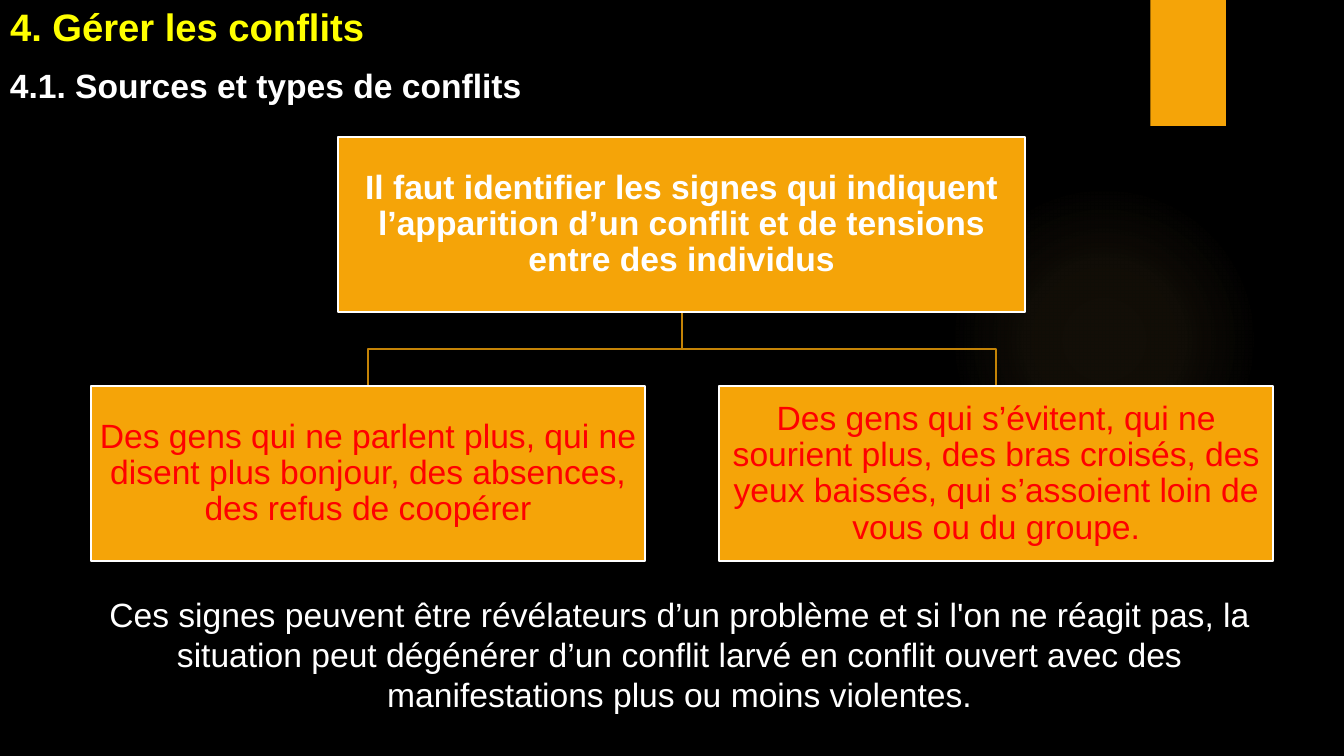
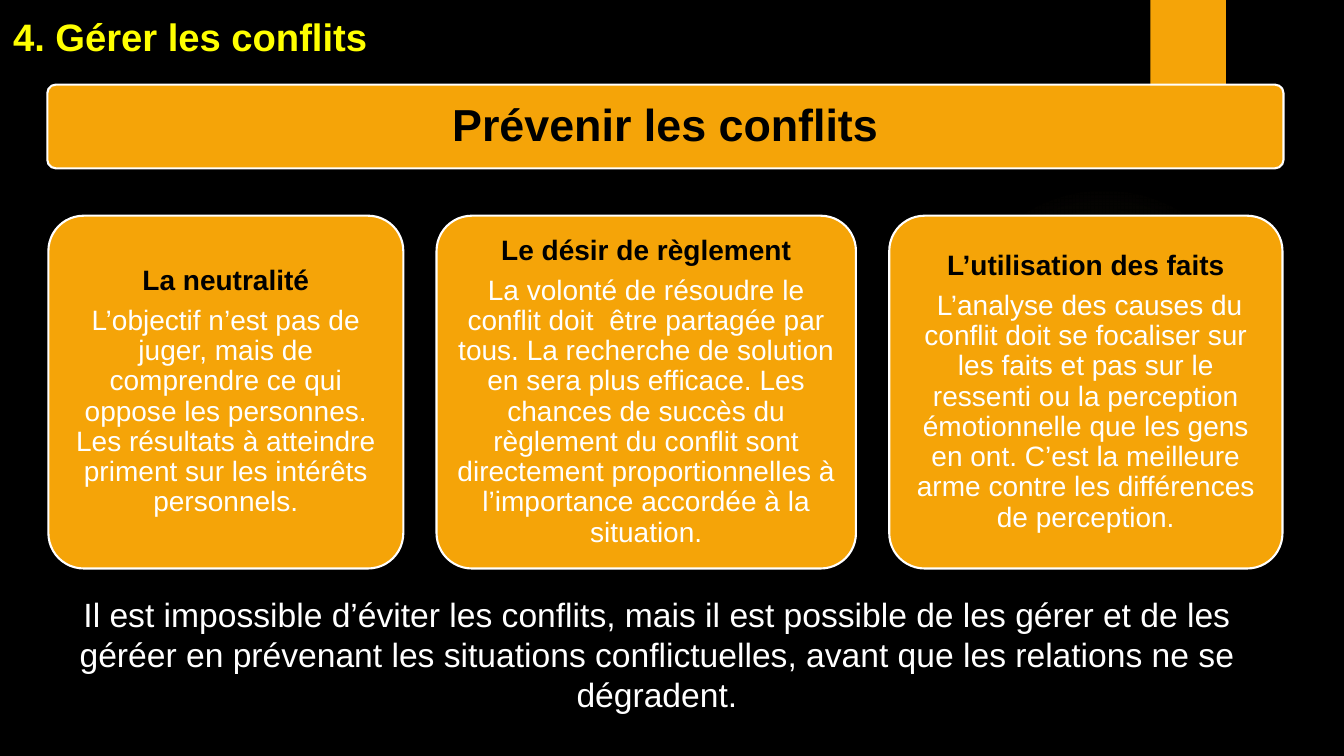
"""Build two slides on managing and preventing conflicts."""
from dataclasses import dataclass

from pptx import Presentation
from pptx import util as u
from pptx.dml.color import RGBColor
from pptx.enum import shapes, text
from pptx.oxml import ns, parse_xml

BLACK, WHITE, YELLOW, RED = "000000", "FFFFFF", "FFFF00", "FF0000"
AMBER, BRANCH, GLOW = "F5A408", "C48306", "FAC96A"
FONT = "Arial"
GLOW_STOPS = ((0, 7), (36, 6), (69, 0))
CENTER, LEFT, JUSTIFY = text.PP_ALIGN.CENTER, text.PP_ALIGN.LEFT, text.PP_ALIGN.JUSTIFY


@dataclass(frozen=True)
class Area:
    left: float
    top: float
    width: float
    height: float

    @property
    def middle(self) -> float:
        return self.left + self.width / 2

    @property
    def bottom(self) -> float:
        return self.top + self.height

    def lengths(self) -> tuple:
        return tuple(u.Inches(n) for n in (self.left, self.top, self.width, self.height))


@dataclass(frozen=True)
class Line:
    words: str
    size: float
    color: str
    bold: bool = False


@dataclass(frozen=True)
class Card:
    width: float
    heading: str
    body: str


TREE_ROOT = Area(3.35, 1.36, 6.82, 1.74)
ROOT_LINE = Line("Il faut identifier les signes qui indiquent l’apparition d’un conflit "
                 "et de tensions entre des individus", 24, WHITE, True)
SIGN_TOP, SIGN_WIDTH, SIGN_LEFT, SIGN_STEP = 3.83, 5.5, 0.9, 6.23
SIGNS = (
    "Des gens qui ne parlent plus, qui ne disent plus bonjour, des absences, "
    "des refus de coopérer",
    "Des gens qui s’évitent, qui ne sourient plus, des bras croisés, des yeux baissés, "
    "qui s’assoient loin de vous ou du groupe.",
)
CARD_LEFT, CARD_TOP, CARD_HEIGHT, CARD_GAP = 0.48, 2.14, 3.5, 0.33
CARDS = (
    Card(3.52, "La neutralité",
         "L’objectif n’est pas de juger, mais de comprendre ce qui oppose les personnes. "
         "Les résultats à atteindre priment sur les intérêts personnels."),
    Card(4.16, "Le désir de règlement",
         "La volonté de résoudre le conflit doit  être partagée par tous. La recherche de "
         "solution en sera plus efficace. Les chances de succès du règlement du conflit sont "
         "directement proportionnelles à l’importance accordée à la situation."),
    Card(3.9, "L’utilisation des faits",
         " L’analyse des causes du conflit doit se focaliser sur les faits et pas sur le "
         "ressenti ou la perception émotionnelle que les gens en ont. C’est la meilleure "
         "arme contre les différences de perception."),
)


def rgb(color: str) -> RGBColor:
    return RGBColor.from_string(color)


def write(frame, lines, align=CENTER, anchor=text.MSO_ANCHOR.TOP,
          inset=None, spacing=None, gap=0) -> None:
    frame.word_wrap = True
    frame.auto_size = text.MSO_AUTO_SIZE.NONE
    frame.vertical_anchor = anchor
    if inset is not None:
        frame.margin_left = frame.margin_right = u.Inches(inset)
        frame.margin_top = frame.margin_bottom = u.Inches(inset)
    for index, line in enumerate(lines):
        paragraph = frame.add_paragraph() if index else frame.paragraphs[0]
        paragraph.alignment = align
        if spacing:
            paragraph.line_spacing = spacing
        if index:
            paragraph.space_before = u.Pt(gap)
        run = paragraph.add_run()
        run.text = line.words
        run.font.name = FONT
        run.font.size = u.Pt(line.size)
        run.font.bold = line.bold
        run.font.color.rgb = rgb(line.color)


def add_panel(slide, area: Area, lines, inset: float, rounded: bool = False) -> None:
    kind = shapes.MSO_SHAPE.ROUNDED_RECTANGLE if rounded else shapes.MSO_SHAPE.RECTANGLE
    panel = slide.shapes.add_shape(kind, *area.lengths())
    if rounded:
        panel.adjustments[0] = 0.1
    panel.shadow.inherit = False
    panel.fill.solid()
    panel.fill.fore_color.rgb = rgb(AMBER)
    panel.line.color.rgb = rgb(WHITE)
    panel.line.width = u.Pt(1.5)
    write(panel.text_frame, lines, anchor=text.MSO_ANCHOR.MIDDLE,
          inset=inset, spacing=0.9, gap=7)


def add_note(slide, area: Area, line: Line, align=CENTER) -> None:
    write(slide.shapes.add_textbox(*area.lengths()).text_frame, [line], align)


def add_branch(slide, parent: Area, child: Area) -> None:
    bend = (parent.bottom + child.top) / 2
    corners = [(parent.middle, bend), (child.middle, bend), (child.middle, child.top)]
    builder = slide.shapes.build_freeform(u.Inches(parent.middle), u.Inches(parent.bottom))
    builder.add_line_segments([(u.Inches(x), u.Inches(y)) for x, y in corners], close=False)
    branch = builder.convert_to_shape()
    branch.shadow.inherit = False
    branch.fill.background()
    branch.line.color.rgb = rgb(BRANCH)
    branch.line.width = u.Pt(1.5)


def add_glow(slide) -> None:
    glow = slide.shapes.add_shape(shapes.MSO_SHAPE.OVAL, *Area(9.41, 1.83, 3.08, 3.08).lengths())
    glow.shadow.inherit = False
    glow.line.fill.background()
    glow.fill.gradient()
    stops = "".join(
        f'<a:gs pos="{place * 1000}"><a:srgbClr val="{GLOW}">'
        f'<a:alpha val="{alpha * 1000}"/></a:srgbClr></a:gs>'
        for place, alpha in GLOW_STOPS)
    properties = glow.element.spPr
    properties.replace(properties.find(ns.qn("a:gradFill")), parse_xml(
        f'<a:gradFill {ns.nsdecls("a")}><a:gsLst>{stops}</a:gsLst><a:path path="circle">'
        '<a:fillToRect l="50000" t="50000" r="50000" b="50000"/></a:path></a:gradFill>'))


def start_slide(deck, heading: Area):
    slide = deck.slides.add_slide(deck.slide_layouts[5])
    add_glow(slide)
    tab = slide.shapes.add_shape(shapes.MSO_SHAPE.RECTANGLE, *Area(11.41, 0, 0.75, 1.25).lengths())
    tab.shadow.inherit = False
    tab.fill.solid()
    tab.fill.fore_color.rgb = rgb(AMBER)
    tab.line.fill.background()
    title = slide.shapes.title
    title.left, title.top, title.width, title.height = heading.lengths()
    write(title.text_frame, [Line("4. Gérer les conflits", 27.3, YELLOW, True)],
          LEFT, text.MSO_ANCHOR.BOTTOM)
    return slide


def build_sources(deck) -> None:
    slide = start_slide(deck, Area(0, 0, 7.54, 0.54))
    add_note(slide, Area(0, 0.59, 12.37, 0.5),
             Line("4.1. Sources et types de conflits", 24, WHITE, True), JUSTIFY)
    signs = [Area(SIGN_LEFT + i * SIGN_STEP, SIGN_TOP, SIGN_WIDTH, TREE_ROOT.height)
             for i in range(len(SIGNS))]
    for sign in signs:
        add_branch(slide, TREE_ROOT, sign)
    add_panel(slide, TREE_ROOT, [ROOT_LINE], 0.02)
    for sign, words in zip(signs, SIGNS):
        add_panel(slide, sign, [Line(words, 24, RED)], 0.02)
    add_note(slide, Area(0.86, 5.84, 11.76, 1.31), Line(
        "Ces signes peuvent être révélateurs d’un problème et si l'on ne réagit pas, la "
        "situation peut dégénérer d’un conflit larvé en conflit ouvert avec des "
        "manifestations plus ou moins violentes.", 24, WHITE))


def build_prevention(deck) -> None:
    slide = start_slide(deck, Area(0.03, 0.05, 13.14, 0.59))
    add_note(slide, Area(0.27, 5.84, 12.49, 1.31), Line(
        "Il est impossible d’éviter les conflits, mais il est possible de les gérer et de "
        "les géréer en prévenant les situations conflictuelles, avant que les relations "
        "ne se dégradent.", 24, WHITE))
    add_panel(slide, Area(0.47, 0.84, 12.26, 0.83),
              [Line("Prévenir les conflits", 32, BLACK, True)], 0.13, rounded=True)
    left = CARD_LEFT
    for card in CARDS:
        add_panel(slide, Area(left, CARD_TOP, card.width, CARD_HEIGHT),
                  [Line(card.heading, 20, BLACK, True), Line(card.body, 20, WHITE)],
                  0.08, rounded=True)
        left += card.width + CARD_GAP


def main() -> None:
    deck = Presentation()
    deck.slide_width, deck.slide_height = u.Inches(13.33), u.Inches(7.5)
    backdrop = deck.slide_master.background.fill
    backdrop.solid()
    backdrop.fore_color.rgb = rgb(BLACK)
    build_sources(deck)
    build_prevention(deck)
    deck.save("out.pptx")


if __name__ == "__main__":
    main()
